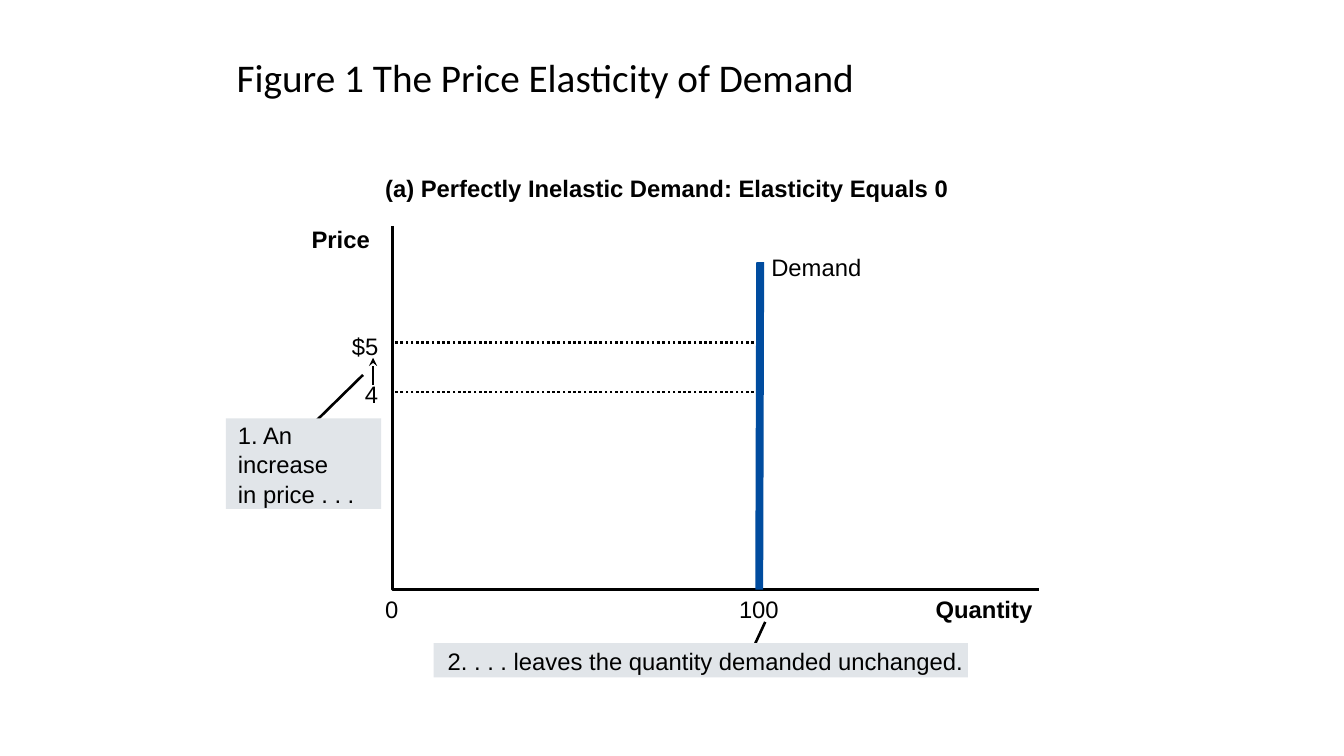
from lxml import etree
from pptx import Presentation
from pptx.dml.color import RGBColor
from pptx.enum.dml import MSO_LINE
from pptx.enum.shapes import MSO_CONNECTOR, MSO_SHAPE
from pptx.enum.text import MSO_ANCHOR, PP_ALIGN
from pptx.oxml.ns import qn
from pptx.util import Inches, Pt

STRAIGHT = MSO_CONNECTOR.STRAIGHT
RECTANGLE = MSO_SHAPE.RECTANGLE
MIDDLE = MSO_ANCHOR.MIDDLE
LEFT = PP_ALIGN.LEFT
DOTTED = MSO_LINE.ROUND_DOT

COLORS = {"black": "000000", "demand": "004C9F", "callout": "E1E5E9"}
AXIS_X, AXIS_TOP, AXIS_Y, AXIS_RIGHT = 3.89, 2.24, 5.85, 10.3
DEMAND_X, DEMAND_TOP = 7.53, 2.6
LINE_WIDTH, DEMAND_WIDTH = 1.88, 5.63
LABEL_HEIGHT = 0.29


def style_text(paragraph, text, size=17, font="Arial", bold=False):
    paragraph.text = text
    paragraph.alignment = LEFT
    paragraph.font.name = font
    paragraph.font.size = Pt(size)
    paragraph.font.bold = bold
    paragraph.font.color.rgb = RGBColor.from_string(COLORS["black"])


def add_line(start, end, color="black", width=LINE_WIDTH):
    points = [Inches(value) for value in (*start, *end)]
    connector = slide.shapes.add_connector(STRAIGHT, *points)
    connector.line.color.rgb = RGBColor.from_string(COLORS[color])
    connector.line.width = Pt(width)
    etree.SubElement(connector._element.spPr, qn("a:effectLst"))
    return connector


presentation = Presentation()
presentation.slide_width = Inches(13.33)
presentation.slide_height = Inches(7.5)
slide = presentation.slides.add_slide(presentation.slide_layouts[6])

title = slide.shapes.add_textbox(Inches(2.25), Inches(0.46), Inches(8.84), Inches(0.7))
title.text_frame.word_wrap = True
title.text_frame.vertical_anchor = MIDDLE
title_paragraph = title.text_frame.paragraphs[0]
style_text(title_paragraph, "Figure 1 The Price Elasticity of Demand", 28, "Calibri")
title_paragraph.line_spacing = 0.8

builder = slide.shapes.build_freeform(Inches(AXIS_X), Inches(AXIS_TOP))
builder.add_line_segments(
    [(Inches(AXIS_X), Inches(AXIS_Y)), (Inches(AXIS_RIGHT), Inches(AXIS_Y))], close=False
)
axes = builder.convert_to_shape()
axes.shadow.inherit = False
axes.fill.background()
axes.line.color.rgb = RGBColor.from_string(COLORS["black"])
axes.line.width = Pt(LINE_WIDTH)

price_arrow = add_line((3.7, 3.82), (3.7, 3.55))
arrowhead = etree.SubElement(price_arrow.line._get_or_add_ln(), qn("a:tailEnd"))
arrowhead.set("type", "stealth")

for price_y in (3.4, 3.89):
    price_line = add_line((DEMAND_X, price_y), (AXIS_X, price_y))
    price_line.line.dash_style = DOTTED

add_line((DEMAND_X, AXIS_Y), (DEMAND_X + 0.01, DEMAND_TOP), "demand", DEMAND_WIDTH)

labels = [
    ("(a) Perfectly Inelastic Demand: Elasticity Equals 0", 3.82, 1.72, 5.64, True),
    ("Price", 3.09, 2.23, 0.59, True),
    ("Quantity", 9.28, 5.9, 0.97, True),
    ("$5", 3.49, 3.29, 0.27, False),
    ("4", 3.62, 3.77, 0.13, False),
    ("0", 3.82, 5.9, 0.13, False),
    ("100", 7.33, 5.9, 0.4, False),
    ("Demand", 7.65, 2.51, 0.9, False),
]
for text, left, top, width, bold in labels:
    label = slide.shapes.add_textbox(
        Inches(left), Inches(top), Inches(width), Inches(LABEL_HEIGHT)
    )
    frame = label.text_frame
    frame.word_wrap = False
    frame.margin_left = frame.margin_right = frame.margin_top = frame.margin_bottom = 0
    style_text(frame.paragraphs[0], text, bold=bold)

callouts = [
    (["1. An", "increase", "in price . . ."],
     (2.24, 4.15, 1.54, 0.9), 0.12, (3.08, 4.23), (3.6, 3.72)),
    (["2. . . . leaves the quantity demanded unchanged."],
     (4.3, 6.38, 5.3, 0.34), 0.14, (7.46, 6.45), (7.59, 6.17)),
]
for lines, box, indent, leader_start, leader_end in callouts:
    add_line(leader_start, leader_end)
    callout = slide.shapes.add_shape(RECTANGLE, *[Inches(value) for value in box])
    callout.shadow.inherit = False
    callout.fill.solid()
    callout.fill.fore_color.rgb = RGBColor.from_string(COLORS["callout"])
    callout.line.fill.background()
    frame = callout.text_frame
    frame.word_wrap = True
    frame.vertical_anchor = MIDDLE
    frame.margin_left = Inches(indent)
    frame.margin_right = frame.margin_top = frame.margin_bottom = 0
    for index, text in enumerate(lines):
        paragraph = frame.paragraphs[0] if index == 0 else frame.add_paragraph()
        style_text(paragraph, text)
        paragraph.line_spacing = Pt(21)

presentation.save("out.pptx")
